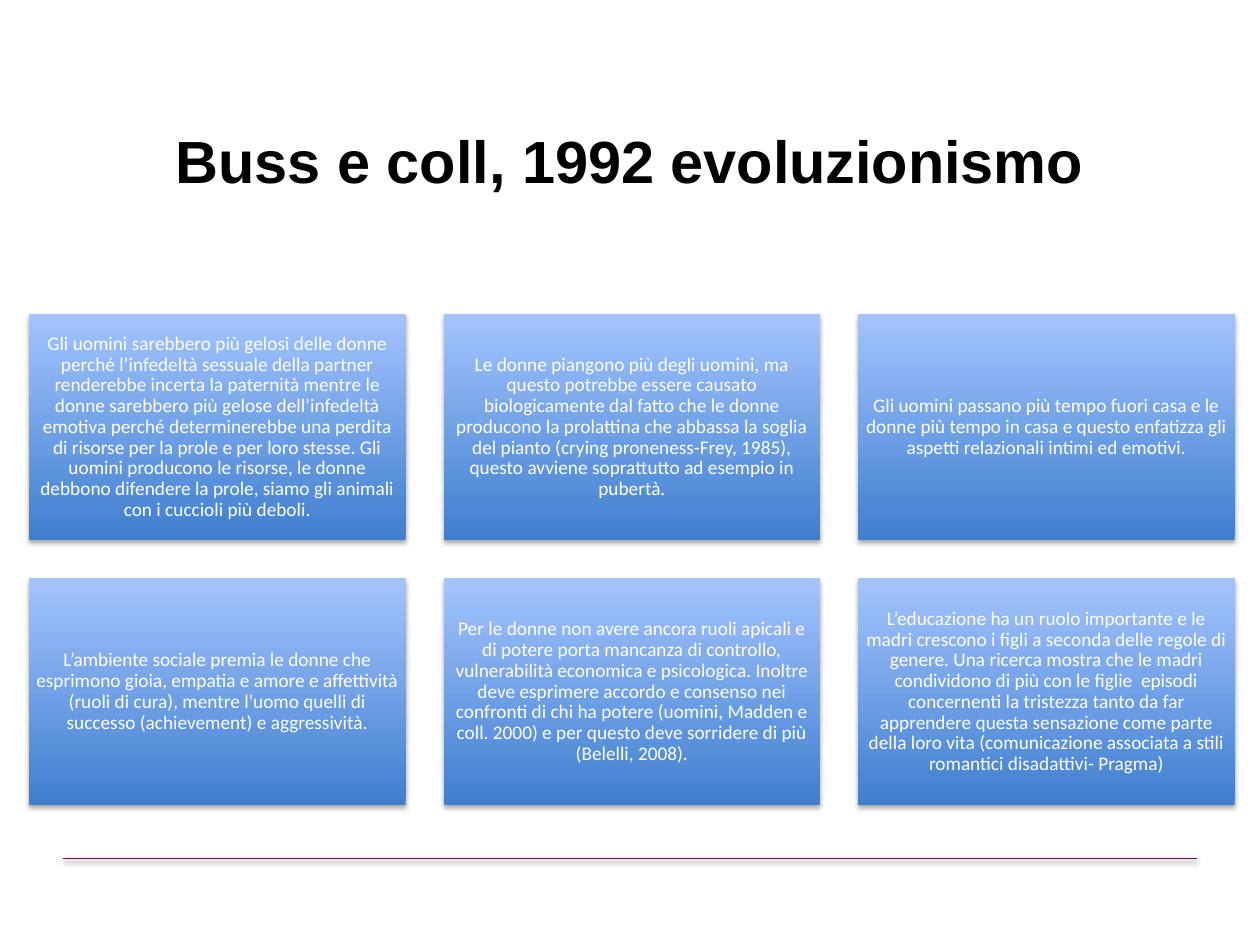
from lxml.etree import SubElement
from pptx import Presentation
from pptx.dml.color import RGBColor
from pptx.enum.shapes import MSO_CONNECTOR, MSO_SHAPE
from pptx.enum.text import MSO_ANCHOR, PP_ALIGN
from pptx.oxml.ns import qn
from pptx.util import Inches, Pt

TITLE = "Buss e coll, 1992 evoluzionismo"
CARDS = [
    "Gli uomini sarebbero più gelosi delle donne perché l’infedeltà sessuale della partner "
    "renderebbe incerta la paternità mentre le donne sarebbero più gelose dell’infedeltà emotiva "
    "perché determinerebbe una perdita di risorse per la prole e per loro stesse. Gli uomini "
    "producono le risorse, le donne debbono difendere la prole, siamo gli animali con i cuccioli "
    "più deboli.",
    "Le donne piangono più degli uomini, ma questo potrebbe essere causato biologicamente dal "
    "fatto che le donne producono la prolattina che abbassa la soglia del pianto (crying "
    "proneness-Frey, 1985), questo avviene soprattutto ad esempio in pubertà.",
    "Gli uomini passano più tempo fuori casa e le donne più tempo in casa e questo enfatizza gli "
    "aspetti relazionali intimi ed emotivi.",
    "L’ambiente sociale premia le donne che esprimono gioia, empatia e amore e affettività (ruoli "
    "di cura), mentre l’uomo quelli di successo (achievement) e aggressività.",
    "Per le donne non avere ancora ruoli apicali e di potere porta mancanza di controllo, "
    "vulnerabilità economica e psicologica. Inoltre deve esprimere accordo e consenso nei "
    "confronti di chi ha potere (uomini, Madden e coll. 2000) e per questo deve sorridere di più "
    "(Belelli, 2008).",
    "L’educazione ha un ruolo importante e le madri crescono i figli a seconda delle regole di "
    "genere. Una ricerca mostra che le madri condividono di più con le figlie  episodi concernenti "
    "la tristezza tanto da far apprendere questa sensazione come parte della loro vita "
    "(comunicazione associata a stili romantici disadattivi- Pragma)",
]
COLUMNS = 3
LEFT, TOP, CARD_WIDTH, CARD_HEIGHT, GAP = 0.23, 2.49, 2.99, 1.8, 0.3
MARGIN, RULE_Y = 0.5, 6.81
GRADIENT = ["3F7FCE", "A4C4FF"]
TITLE_FONT = {"name": "Arial", "size": Pt(34), "bold": True}
CARD_FONT = {"name": "Calibri", "size": Pt(11), "bold": False}


def color(value):
    return RGBColor.from_string(value)


def add_shadow(shape, distance, opacity):
    """Cast a soft black shadow straight down."""
    properties = shape._element.spPr
    effects = properties.find(qn("a:effectLst"))
    if effects is None:
        effects = SubElement(properties, qn("a:effectLst"))
    shadow = SubElement(effects, qn("a:outerShdw"), blurRad=str(Pt(3.1)),
                        dist=str(Pt(distance)), dir="5400000", rotWithShape="0")
    black = SubElement(shadow, qn("a:srgbClr"), val="000000")
    SubElement(black, qn("a:alpha"), val=str(opacity * 1000))


def write(shape, text, font, ink, inset):
    frame = shape.text_frame
    frame.word_wrap = True
    frame.vertical_anchor = MSO_ANCHOR.MIDDLE
    for side in ("left", "right", "top", "bottom"):
        setattr(frame, f"margin_{side}", Inches(inset))
    para = frame.paragraphs[0]
    para.alignment = PP_ALIGN.CENTER
    para.line_spacing = 0.9
    span = para.add_run()
    span.text = text
    for name, value in font.items():
        setattr(span.font, name, value)
    span.font.color.rgb = color(ink)


def add_card(page, index, text):
    row, column = divmod(index, COLUMNS)
    card = page.shapes.add_shape(
        MSO_SHAPE.RECTANGLE,
        Inches(LEFT + column * (CARD_WIDTH + GAP)), Inches(TOP + row * (CARD_HEIGHT + GAP)),
        Inches(CARD_WIDTH), Inches(CARD_HEIGHT))
    card.fill.gradient()
    card.fill.gradient_angle = 90
    for stop, value in zip(card.fill.gradient_stops, GRADIENT):
        stop.color.rgb = color(value)
    card.line.fill.background()
    card.shadow.inherit = False
    add_shadow(card, 1.8, 35)
    write(card, text, CARD_FONT, "FFFFFF", 0.05)


def main():
    deck = Presentation()
    deck.slide_width, deck.slide_height = Inches(10), Inches(7.5)
    page = deck.slides.add_slide(deck.slide_layouts[6])

    rule = page.shapes.add_connector(MSO_CONNECTOR.STRAIGHT, Inches(MARGIN), Inches(RULE_Y),
                                     Inches(10 - MARGIN), Inches(RULE_Y))
    rule.line.color.rgb = color("631450")
    rule.line.width = Pt(0.5)
    add_shadow(rule, 1.6, 38)

    title = page.shapes.add_textbox(Inches(MARGIN), Inches(1), Inches(10 - 2 * MARGIN), Inches(0.61))
    write(title, TITLE, TITLE_FONT, "000000", 0.05)

    for index, text in enumerate(CARDS):
        add_card(page, index, text)
    deck.save("out.pptx")


if __name__ == "__main__":
    main()
